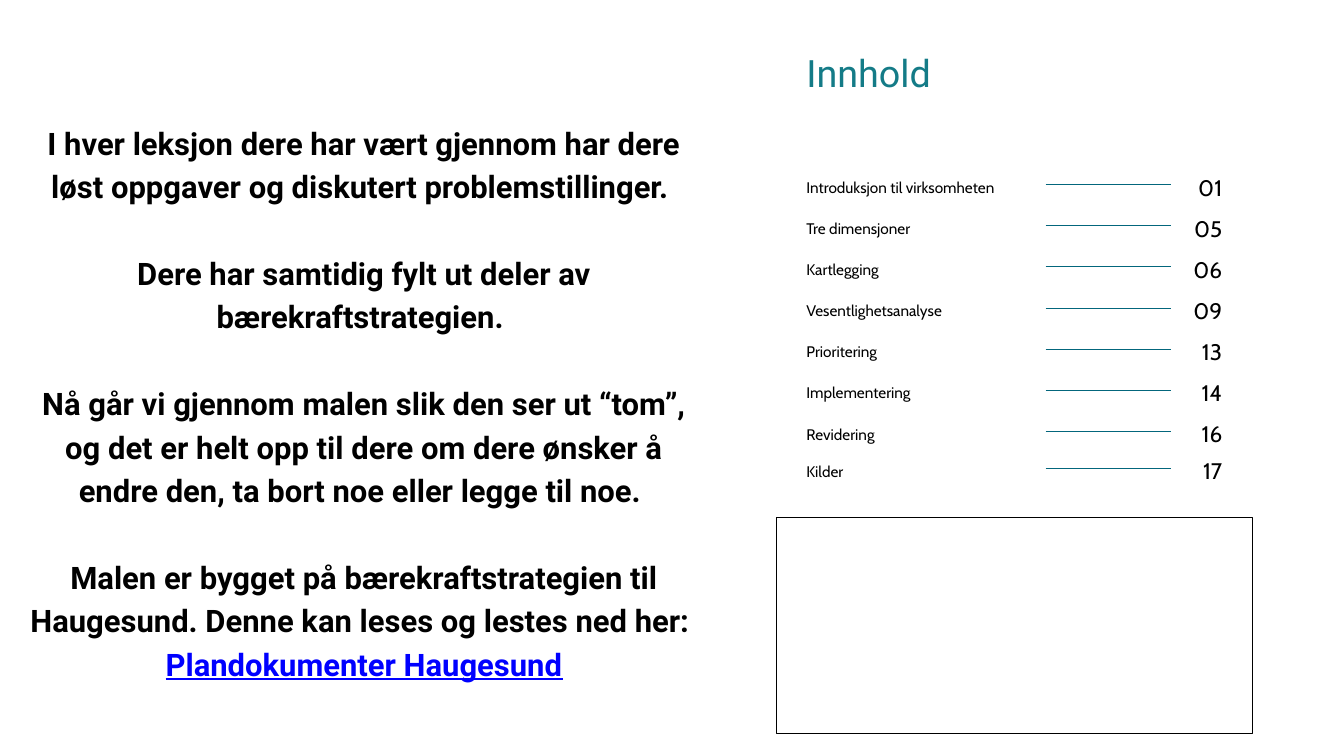
from dataclasses import dataclass

import pptx
import pptx.dml.color
import pptx.enum.shapes
import pptx.enum.text
import pptx.oxml.ns
import pptx.util
from lxml import etree

Pt = pptx.util.Pt
RGB = pptx.dml.color.RGBColor
ALIGN = pptx.enum.text.PP_ALIGN


@dataclass(frozen=True)
class Theme:
    ink: RGB = RGB(0x00, 0x00, 0x00)
    heading: RGB = RGB(0x14, 0x7B, 0x87)
    leader: RGB = RGB(0x03, 0x66, 0x7C)
    link: RGB = RGB(0x00, 0x00, 0xFF)
    heading_font: str = "Roboto"
    list_font: str = "Cabin"
    heading_size: float = 40.4
    message_size: float = 33.2
    number_size: float = 24.1
    entry_size: float = 16.4


THEME = Theme()

ENTRIES = [
    ("Introduksjon til virksomheten", "01"),
    ("Tre dimensjoner", "05"),
    ("Kartlegging", "06"),
    ("Vesentlighetsanalyse", "09"),
    ("Prioritering", "13"),
    ("Implementering", "14"),
    ("Revidering", "16"),
    ("Kilder", "17"),
]
LIST_TOP = 181.2
ROW_PITCH = 44
LAST_ROW_LIFT = 4.4
CONTENTS_LEFT = 864

MESSAGE = [
    "I hver leksjon dere har vært gjennom har dere løst oppgaver og diskutert problemstillinger. ",
    "Dere har samtidig fylt ut deler av bærekraftstrategien. ",
    "Nå går vi gjennom malen slik den ser ut “tom”, og det er helt opp til dere "
    "om dere ønsker å endre den, ta bort noe eller legge til noe. ",
    "Malen er bygget på bærekraftstrategien til Haugesund. Denne kan leses og lestes ned her: ",
]
MESSAGE_LEADING = 46.5


def add_paragraph(paragraph, text, *, size, font, leading, color=THEME.ink,
                  align=ALIGN.LEFT, bold=False, underline=False, before=0):
    paragraph.alignment = align
    paragraph.line_spacing = Pt(leading)
    paragraph.space_before = Pt(before)
    run = paragraph.add_run()
    run.text = text
    run.font.size = Pt(size)
    run.font.name = font
    run.font.bold = bold
    run.font.underline = underline
    run.font.color.rgb = color


def add_text_area(slide, left, top, width, height):
    frame = slide.shapes.add_textbox(Pt(left), Pt(top), Pt(width), Pt(height)).text_frame
    frame.word_wrap = True
    frame.margin_left = frame.margin_top = frame.margin_right = frame.margin_bottom = 0
    return frame


def add_leader(slide, y):
    leader = slide.shapes.add_connector(
        pptx.enum.shapes.MSO_CONNECTOR.STRAIGHT, Pt(1120.3), Pt(y), Pt(1254.2), Pt(y))
    leader.line.color.rgb = THEME.leader
    leader.line.width = Pt(0.96)
    etree.SubElement(leader._element.spPr, pptx.oxml.ns.qn("a:effectLst"))


def add_entry(slide, top, title, page):
    label = add_text_area(slide, CONTENTS_LEFT, top + 2.5, 294.5, 23.8)
    add_paragraph(label.paragraphs[0], title, size=THEME.entry_size,
                  font=THEME.list_font, leading=27.1)
    number = add_text_area(slide, 1265, top, 44.6, 31)
    add_paragraph(number.paragraphs[0], page, size=THEME.number_size,
                  font=THEME.list_font, leading=33.7, align=ALIGN.RIGHT)
    add_leader(slide, top + 16.8)


def add_contents(slide):
    heading = add_text_area(slide, CONTENTS_LEFT, 54.7, 297.4, 47.5)
    add_paragraph(heading.paragraphs[0], "Innhold", size=THEME.heading_size,
                  font=THEME.heading_font, leading=46.9, color=THEME.heading)
    last = len(ENTRIES) - 1
    for row, (title, page) in enumerate(ENTRIES):
        lift = LAST_ROW_LIFT if row == last else 0
        add_entry(slide, LIST_TOP + row * ROW_PITCH - lift, title, page)


def add_empty_frame(slide):
    frame = slide.shapes.add_shape(
        pptx.enum.shapes.MSO_SHAPE.RECTANGLE, Pt(831.6), Pt(554.4), Pt(510.5), Pt(231.1))
    frame.shadow.inherit = False
    frame.fill.background()
    frame.line.color.rgb = THEME.ink
    frame.line.width = Pt(1)


def add_message(slide):
    message = add_text_area(slide, 30.2, 126.7, 720, 604)
    style = dict(size=THEME.message_size, font=THEME.heading_font,
                 leading=MESSAGE_LEADING, align=ALIGN.CENTER, bold=True)
    for index, text in enumerate(MESSAGE):
        paragraph = message.add_paragraph() if index else message.paragraphs[0]
        add_paragraph(paragraph, text, before=MESSAGE_LEADING if index else 0, **style)
    add_paragraph(message.add_paragraph(), "Plandokumenter Haugesund",
                  color=THEME.link, underline=True, **style)


def main():
    deck = pptx.Presentation()
    deck.slide_width, deck.slide_height = Pt(1440), Pt(810)
    slide = deck.slides.add_slide(deck.slide_layouts[6])
    add_contents(slide)
    add_empty_frame(slide)
    add_message(slide)
    deck.save("out.pptx")


if __name__ == "__main__":
    main()
